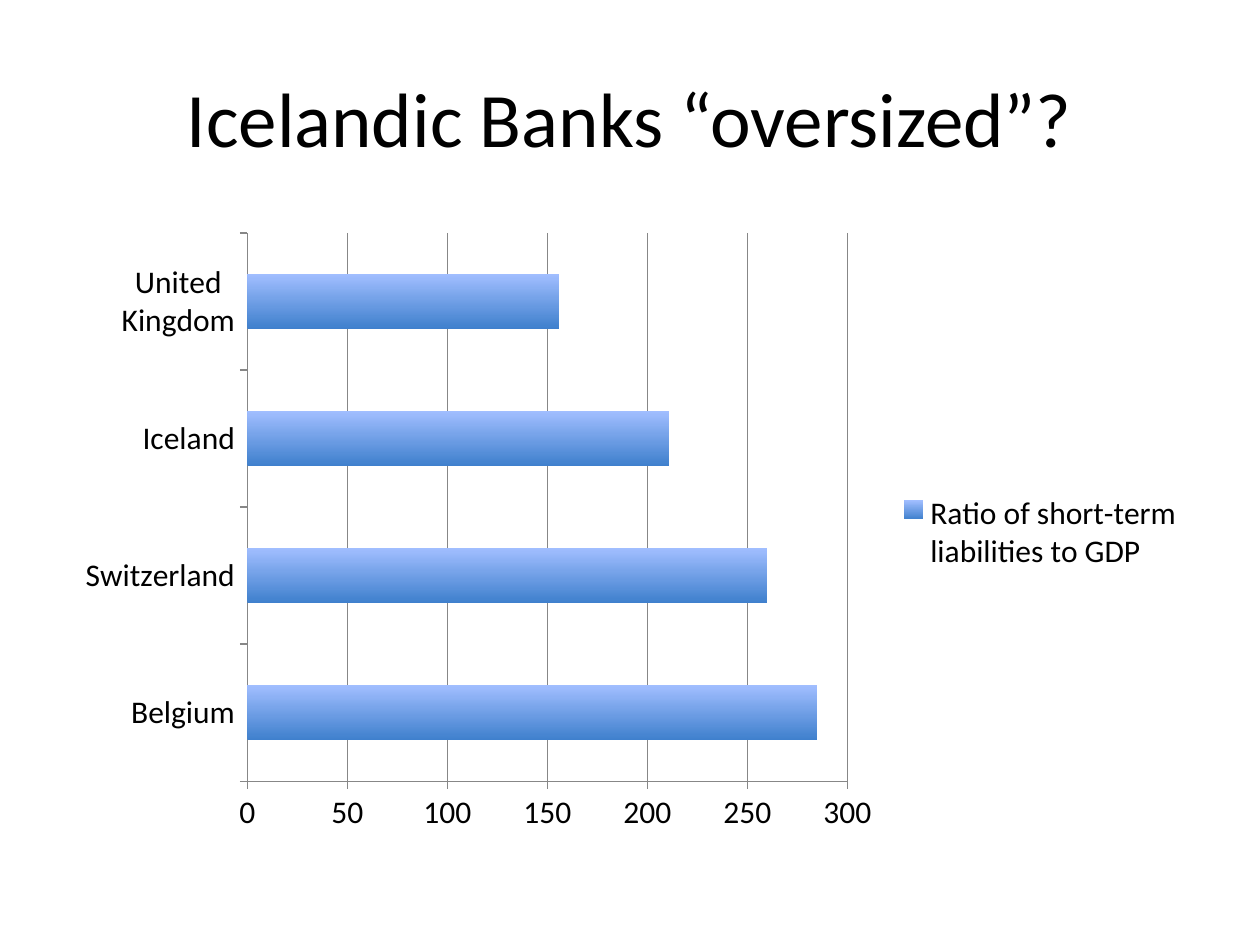
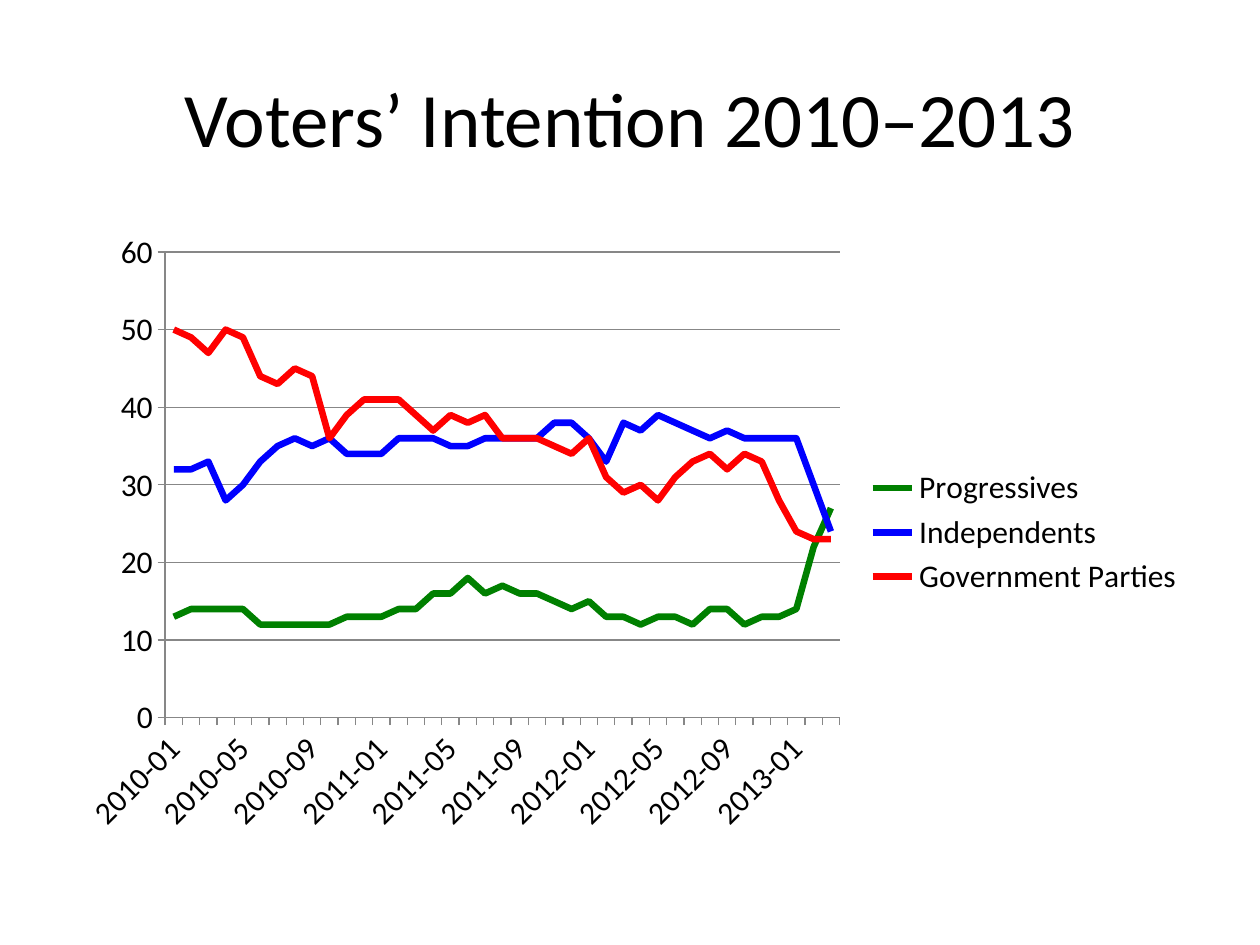
from lxml.etree import SubElement
from pptx import Presentation
from pptx.chart.data import CategoryChartData
from pptx.dml.color import RGBColor
from pptx.enum.chart import XL_CHART_TYPE, XL_LEGEND_POSITION, XL_TICK_MARK
from pptx.enum.text import MSO_ANCHOR, PP_ALIGN
from pptx.oxml.ns import qn
from pptx.util import Inches, Pt

FONT = "Calibri"
COLORS = {
    "text": "000000",
    "axis": "878787",
    "bar_light": "A1BEFF",
    "bar_dark": "3F80CD",
    "Progressives": "008000",
    "Independents": "0000FF",
    "Government Parties": "FF0000",
}
TITLE_BOX = [Inches(n) for n in (0.5, 0.3, 9, 1.25)]
CHART_BOX = [Inches(n) for n in (0.5, 1.75, 9, 4.95)]

LIABILITIES = {"Belgium": 285, "Switzerland": 260, "Iceland": 211, "United Kingdom": 156}
MONTHS = [f"{2010 + n // 12}-{n % 12 + 1:02d}" for n in range(39)]
SUPPORT = {
    "Progressives": [
        13, 14, 14, 14, 14, 12, 12, 12, 12, 12, 13, 13,
        13, 14, 14, 16, 16, 18, 16, 17, 16, 16, 15, 14,
        15, 13, 13, 12, 13, 13, 12, 14, 14, 12, 13, 13,
        14, 22, 27],
    "Independents": [
        32, 32, 33, 28, 30, 33, 35, 36, 35, 36, 34, 34,
        34, 36, 36, 36, 35, 35, 36, 36, 36, 36, 38, 38,
        36, 33, 38, 37, 39, 38, 37, 36, 37, 36, 36, 36,
        36, 30, 24],
    "Government Parties": [
        50, 49, 47, 50, 49, 44, 43, 45, 44, 36, 39, 41,
        41, 41, 39, 37, 39, 38, 39, 36, 36, 36, 35, 34,
        36, 31, 29, 30, 28, 31, 33, 34, 32, 34, 33, 28,
        24, 23, 23],
}


def color(name):
    return RGBColor.from_string(COLORS[name])


def style_font(font, size):
    font.name = FONT
    font.size = Pt(size)
    font.color.rgb = color("text")


def add_titled_slide(prs, heading):
    slide = prs.slides.add_slide(prs.slide_layouts[5])
    title = slide.shapes.title
    title.left, title.top, title.width, title.height = TITLE_BOX
    frame = title.text_frame
    frame.text = heading
    frame.vertical_anchor = MSO_ANCHOR.MIDDLE
    frame.paragraphs[0].alignment = PP_ALIGN.CENTER
    style_font(frame.paragraphs[0].runs[0].font, 44)
    return slide


def add_styled_chart(slide, box, kind, categories, series, maximum, step):
    """Add a chart with the shared axes, gridlines, legend and text style."""
    data = CategoryChartData()
    data.categories = categories
    for name, values in series.items():
        data.add_series(name, values)
    chart = slide.shapes.add_chart(kind, *box, data).chart
    style_font(chart.font, 18)
    chart.has_title = False
    chart.has_legend = True
    chart.legend.position = XL_LEGEND_POSITION.RIGHT
    chart.legend.include_in_layout = False
    chart.plots[0].vary_by_categories = False

    values_axis = chart.value_axis
    values_axis.minimum_scale, values_axis.maximum_scale = 0, maximum
    values_axis.major_unit = step
    values_axis.has_major_gridlines = True
    gridlines = values_axis.major_gridlines.format.line
    for line in (gridlines, values_axis.format.line, chart.category_axis.format.line):
        line.color.rgb = color("axis")
        line.width = Pt(0.75)
    for axis in (values_axis, chart.category_axis):
        axis.major_tick_mark = XL_TICK_MARK.OUTSIDE
        axis.minor_tick_mark = XL_TICK_MARK.NONE
        style_font(axis.tick_labels.font, 18)
    return chart


def slant_labels(axis, skip):
    """Turn the axis labels 45 degrees and show one in every `skip`."""
    element = axis._element
    element.find(qn("c:txPr")).find(qn("a:bodyPr")).set("rot", "-2700000")
    label_skip = SubElement(element, qn("c:tickLblSkip"))
    label_skip.set("val", str(skip))
    element.find(qn("c:noMultiLvlLbl")).addprevious(label_skip)


def build_banks_slide(prs):
    slide = add_titled_slide(prs, "Icelandic Banks “oversized”?")
    chart = add_styled_chart(
        slide, CHART_BOX, XL_CHART_TYPE.BAR_CLUSTERED, list(LIABILITIES),
        {"Ratio of short-term liabilities to GDP": list(LIABILITIES.values())}, 300, 50)
    bars = chart.plots[0]
    bars.gap_width = 150
    ratio = bars.series[0]
    ratio.invert_if_negative = False
    fill = ratio.format.fill
    fill.gradient()
    fill.gradient_angle = 90
    for stop, position, shade in zip(fill.gradient_stops, (0, 1), ("bar_dark", "bar_light")):
        stop.position = position
        stop.color.rgb = color(shade)


def build_voters_slide(prs):
    slide = add_titled_slide(prs, "Voters’ Intention 2010–2013")
    chart = add_styled_chart(
        slide, CHART_BOX, XL_CHART_TYPE.LINE, MONTHS, SUPPORT, 60, 10)
    slant_labels(chart.category_axis, 4)
    for party in chart.plots[0].series:
        party.smooth = False
        party.format.line.color.rgb = color(party.name)
        party.format.line.width = Pt(3.75)


def main():
    prs = Presentation()
    prs.slide_width, prs.slide_height = Inches(10), Inches(7.5)
    build_banks_slide(prs)
    build_voters_slide(prs)
    prs.save("out.pptx")


if __name__ == "__main__":
    main()
